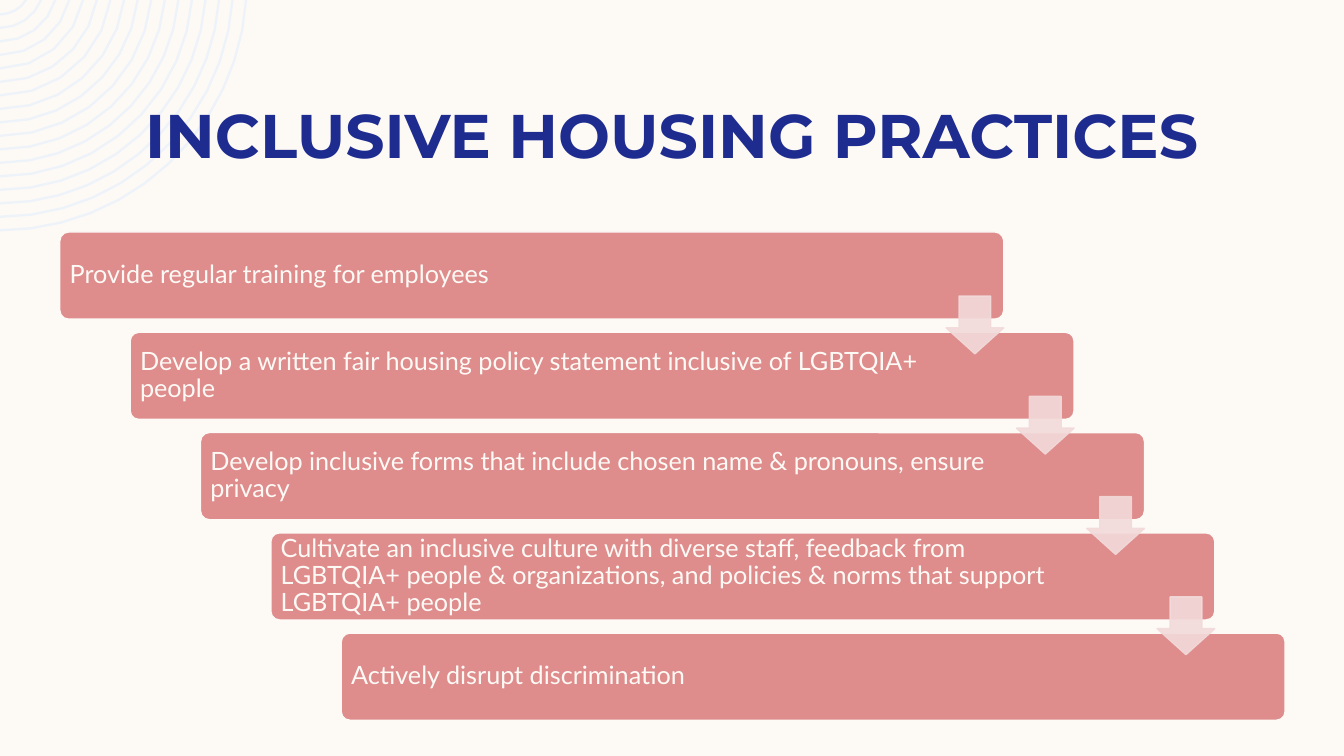
from math import asin, cos, pi, sin

from lxml import etree
from pptx import Presentation
from pptx.dml.color import RGBColor
from pptx.enum.shapes import MSO_SHAPE
from pptx.enum.text import MSO_ANCHOR, PP_ALIGN
from pptx.oxml.ns import qn
from pptx.util import Pt

PX = 9525
CREAM, NAVY, ROSE, BLUSH, MIST = "FDFAF6", "1F2C8F", "DE8C8C", "F2DADA", "EEF3FA"
PRACTICES = [
    "Provide regular training for employees",
    "Develop a written fair housing policy statement inclusive of LGBTQIA+ people",
    "Develop inclusive forms that include chosen name & pronouns, ensure privacy",
    "Cultivate an inclusive culture with diverse staff, feedback from LGBTQIA+ people"
    " & organizations, and policies & norms that support LGBTQIA+ people",
    "Actively disrupt discrimination",
]


def px(length):
    return round(length * PX)


def color(hex_value):
    return RGBColor.from_string(hex_value)


def set_attributes(target, values):
    for name, value in values.items():
        setattr(target, name, value)


def write_text(shape, text, frame_format, paragraph_format, font_format, font_color):
    frame = shape.text_frame
    frame.text = text
    paragraph = frame.paragraphs[0]
    font = paragraph.runs[0].font
    set_attributes(frame, frame_format)
    set_attributes(paragraph, paragraph_format)
    set_attributes(font, font_format)
    font.color.rgb = color(font_color)


def paint(shape, fill_color, line_color=None, alpha=None):
    """Fill and outline a shape; alpha is its opacity in percent."""
    shape.shadow.inherit = False
    shape.fill.solid()
    shape.fill.fore_color.rgb = color(fill_color)
    if line_color is None:
        shape.line.fill.background()
    else:
        shape.line.color.rgb = color(line_color)
        shape.line.width = Pt(1)
    if alpha is not None:
        for element in shape.element.spPr.iter(qn("a:srgbClr")):
            etree.SubElement(element, qn("a:alpha")).set("val", str(alpha * 1000))


def add_rings(slide, left, top, radius, count=17, pitch=12.85, thickness=2.3, rise=15.5):
    """Draw concentric arcs whose centre lies slightly above the given corner."""
    precision = 100

    def arc(arc_radius, segments):
        start = asin(rise / arc_radius)
        angles = [start + (pi / 2 - start) * i / segments for i in range(segments + 1)]
        return [((left + arc_radius * cos(angle)) * precision,
                 (top - rise + arc_radius * sin(angle)) * precision) for angle in angles]

    builder = None
    for index in range(count):
        outer = radius - index * pitch
        segments = max(4, round(outer / 20))
        points = arc(outer, segments) + arc(outer - thickness, segments)[::-1]
        if builder is None:
            builder = slide.shapes.build_freeform(*points[0], scale=PX / precision)
        else:
            builder.move_to(*points[0])
        builder.add_line_segments(points[1:], close=True)
    rings = builder.convert_to_shape()
    paint(rings, MIST)
    return rings


def add_title(slide, left, top, width, height):
    title = slide.shapes.title
    set_attributes(title, dict(left=px(left), top=px(top), width=px(width), height=px(height)))
    write_text(
        title, "INCLUSIVE HOUSING PRACTICES",
        dict(word_wrap=True, vertical_anchor=MSO_ANCHOR.MIDDLE),
        dict(alignment=PP_ALIGN.CENTER),
        dict(name="Montserrat", size=Pt(44), bold=True), NAVY)
    return title


def add_staircase(slide, left, top, width, height):
    """Place the practices as descending bars, joined by arrows, in the given box."""
    bar_width, bar_height, arrow_size, arrow_drop = 899, 83, 55, 61
    gaps = len(PRACTICES) - 1
    step_x, step_y = (width - bar_width) / gaps, (height - bar_height) / gaps
    corners = [(left + i * step_x, top + i * step_y) for i in range(len(PRACTICES))]

    for (x, y), practice in zip(corners, PRACTICES):
        bar = slide.shapes.add_shape(
            MSO_SHAPE.ROUNDED_RECTANGLE, px(x), px(y), px(bar_width), px(bar_height))
        bar.adjustments[0] = 0.1
        paint(bar, ROSE, CREAM)
        write_text(
            bar, practice,
            dict(word_wrap=True, vertical_anchor=MSO_ANCHOR.MIDDLE, margin_left=px(7),
                 margin_right=px(128), margin_top=px(4), margin_bottom=px(4)),
            dict(alignment=PP_ALIGN.LEFT, line_spacing=0.9),
            dict(name="Lato", size=Pt(18)), CREAM)

    for x, y in corners[:-1]:
        arrow = slide.shapes.add_shape(
            MSO_SHAPE.DOWN_ARROW, px(x + bar_width - arrow_size), px(y + arrow_drop),
            px(arrow_size), px(arrow_size))
        arrow.adjustments[0], arrow.adjustments[1] = 0.55, 0.45
        paint(arrow, BLUSH, BLUSH, alpha=90)


def main():
    presentation = Presentation()
    set_attributes(presentation, dict(slide_width=px(1280), slide_height=px(720)))
    slide = presentation.slides.add_slide(presentation.slide_layouts.get_by_name("Title Only"))
    slide.background.fill.solid()
    slide.background.fill.fore_color.rgb = color(CREAM)
    title = add_title(slide, 80, 87, 1120, 81)
    rings = add_rings(slide, 0, 0, 236)
    title.element.addprevious(rings.element)
    add_staircase(slide, 57, 221, 1167, 465)
    presentation.save("out.pptx")


if __name__ == "__main__":
    main()
